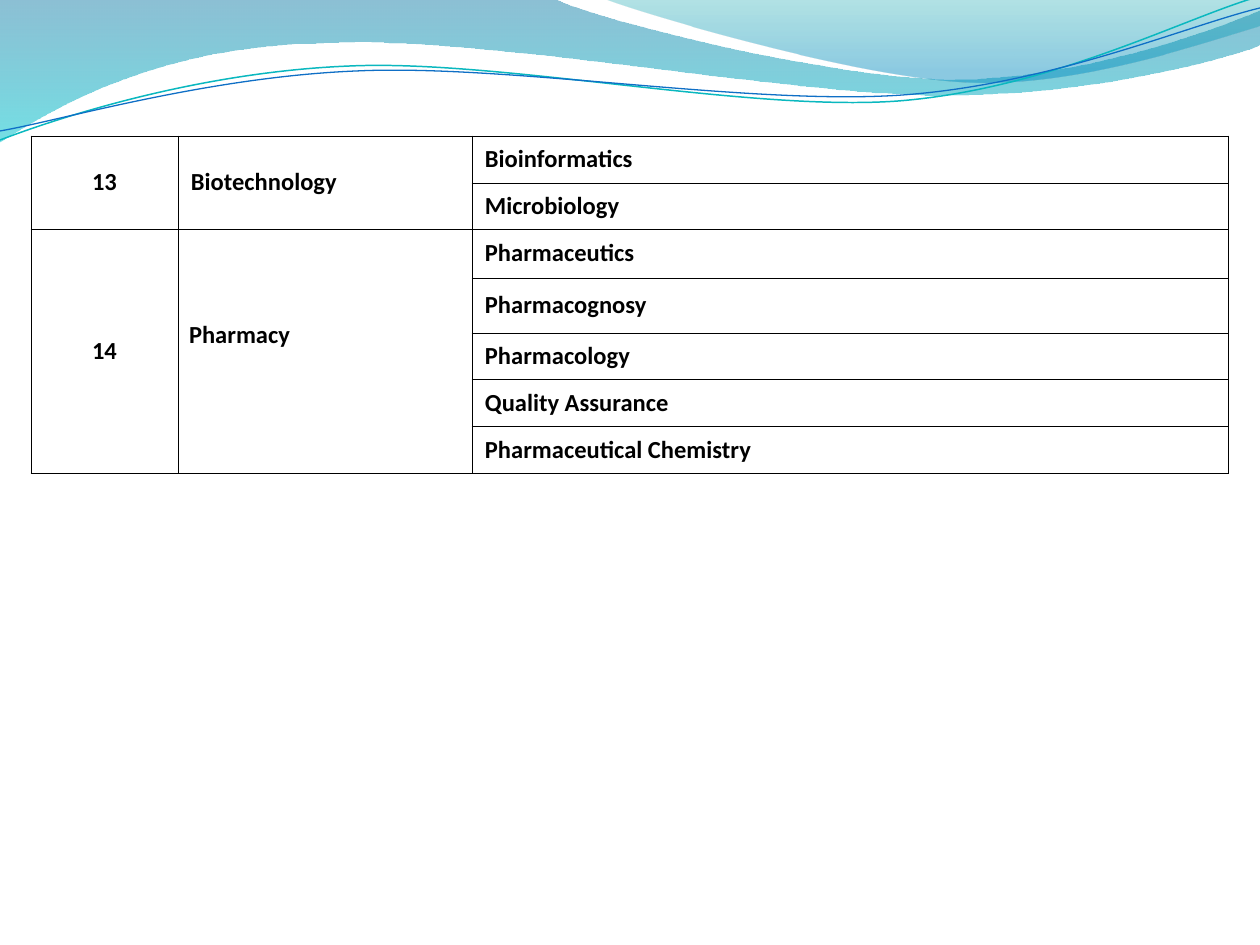
from lxml import etree
from pptx import Presentation
from pptx.dml.color import RGBColor
from pptx.enum.text import MSO_ANCHOR, PP_ALIGN
from pptx.oxml.ns import qn
from pptx.util import Pt

EMU_PER_PX = 914400 / 126
LEFT, CENTER = PP_ALIGN.LEFT, PP_ALIGN.CENTER
MIDDLE = MSO_ANCHOR.MIDDLE

BLACK = RGBColor(0x00, 0x00, 0x00)
DEEP_BLUE = RGBColor(0x00, 0x74, 0xA1)
CYAN = RGBColor(0x00, 0xC6, 0xCF)
TEAL = RGBColor(0x00, 0xA1, 0xA9)
SKY = RGBColor(0x00, 0x8B, 0xBF)
LINE_TEAL = RGBColor(0x0A, 0xB8, 0xBF)
LINE_BLUE = RGBColor(0x0F, 0x6F, 0xC6)

BROAD_WAVE = [
    [(0, 0)],
    [(554, -1)],
    [(600, 21), (837, 79), (955, 79)],
    [(1075, 79), (1207, 33), (1260, 11)],
    [(1261, 45)],
    [(1239, 55), (1096, 96), (940, 95)],
    [(784, 95), (481, 35), (324, 43)],
    [(163, 45), (58, 105), (-1, 142)],
]
CORNER_WAVE = [
    [(604, -1)],
    [(641, 14), (859, 78), (969, 82)],
    [(1079, 87), (1211, 40), (1260, 26)],
    [(1260, 0)],
]
TEAL_CURVE = [
    [(0, 140)],
    [(60, 117), (199, 72), (349, 66)],
    [(498, 59), (747, 112), (898, 101)],
    [(1050, 89), (1182, 19), (1257, -3)],
]
BLUE_CURVE = [
    [(0, 131)],
    [(59, 121), (207, 77), (357, 71)],
    [(508, 64), (752, 106), (903, 95)],
    [(1053, 84), (1186, 26), (1260, 8)],
]

COLUMN_WIDTHS = [147, 294, 756]
ROW_HEIGHTS = [47, 46, 49, 55, 47, 47, 47]
DEPARTMENTS = [
    ("13", "Biotechnology", {}, ["Bioinformatics", "Microbiology"]),
    ("14", "Pharmacy", {"indent": 11, "bottom": 32},
     ["Pharmaceutics", "Pharmacognosy", "Pharmacology",
      "Quality Assurance", "Pharmaceutical Chemistry"]),
]


def px(value):
    return round(value * EMU_PER_PX)


def bend(lines):
    curve = etree.Element(qn("a:cubicBezTo"))
    lines[0].addprevious(curve)
    for line in lines:
        curve.append(line[0])
        line.getparent().remove(line)


def add_path(slide, segments, close):
    points = [(px(x), px(y)) for segment in segments for x, y in segment]
    builder = slide.shapes.build_freeform(*points[0])
    builder.add_line_segments(points[1:], close=close)
    sp = builder.convert_to_shape()
    lines = iter(list(sp._element.iter(qn("a:lnTo"))))
    for segment in segments[1:]:
        pieces = [next(lines) for _ in segment]
        if len(pieces) == 3:
            bend(pieces)
    sp.shadow.inherit = False
    return sp


def add_wave(slide, segments, stops):
    sp = add_path(slide, segments, True)
    sp.line.fill.background()
    sp.fill.gradient()
    sp.fill.gradient_angle = 270
    for stop, (position, color, _) in zip(sp.fill.gradient_stops, stops):
        stop.position = position
        stop.color.rgb = color
    colors = sp._element.spPr.iter(qn("a:srgbClr"))
    for element, (_, _, opacity) in zip(colors, stops):
        etree.SubElement(element, qn("a:alpha"), val=str(opacity * 1000))


def add_curve(slide, segments, color, width):
    sp = add_path(slide, segments, False)
    sp.fill.background()
    sp.line.color.rgb = color
    sp.line.width = Pt(width)


def set_borders(cell):
    tc_pr = cell._tc.get_or_add_tcPr()
    for side in ("lnL", "lnR", "lnT", "lnB"):
        ln = etree.SubElement(tc_pr, qn(f"a:{side}"), w=str(Pt(0.5)))
        fill = etree.SubElement(ln, qn("a:solidFill"))
        etree.SubElement(fill, qn("a:srgbClr"), val=str(BLACK))


def write_cell(cell, text, align=LEFT, indent=13, bottom=0):
    cell.margin_left = cell.margin_right = cell.margin_top = 0
    cell.margin_bottom = px(bottom)
    cell.vertical_anchor = MIDDLE
    p = cell.text_frame.paragraphs[0]
    p.alignment = align
    p_pr = p._p.get_or_add_pPr()
    p_pr.set("marL", str(px(indent)))
    p_pr.set("indent", "0")
    r = p.add_run()
    r.text = text
    r.font.name = "Calibri"
    r.font.size = Pt(14)
    r.font.bold = True
    r.font.color.rgb = BLACK


def add_department_table(slide):
    table = slide.shapes.add_table(
        len(ROW_HEIGHTS), len(COLUMN_WIDTHS), px(31), px(136),
        px(sum(COLUMN_WIDTHS)), px(sum(ROW_HEIGHTS))).table
    table.first_row = table.horz_banding = False
    for column, width in zip(table.columns, COLUMN_WIDTHS):
        column.width = px(width)
    for row, height in zip(table.rows, ROW_HEIGHTS):
        row.height = px(height)
    for cell in table.iter_cells():
        set_borders(cell)
        cell.fill.background()

    top = 0
    for number, department, layout, subjects in DEPARTMENTS:
        last = top + len(subjects) - 1
        for column in (0, 1):
            table.cell(top, column).merge(table.cell(last, column))
        write_cell(table.cell(top, 0), number, align=CENTER, indent=0)
        write_cell(table.cell(top, 1), department, **layout)
        for row, subject in enumerate(subjects, top):
            write_cell(table.cell(row, 2), subject)
        top = last + 1


def main():
    prs = Presentation()
    prs.slide_width, prs.slide_height = px(1260), px(945)
    slide = prs.slides.add_slide(prs.slide_layouts[6])
    add_wave(slide, BROAD_WAVE, [(0, DEEP_BLUE, 45), (1, CYAN, 55)])
    add_wave(slide, CORNER_WAVE, [(0, TEAL, 30), (0.8, SKY, 45)])
    add_curve(slide, TEAL_CURVE, LINE_TEAL, 0.85)
    add_curve(slide, BLUE_CURVE, LINE_BLUE, 0.75)
    add_department_table(slide)
    prs.save("out.pptx")


if __name__ == "__main__":
    main()
